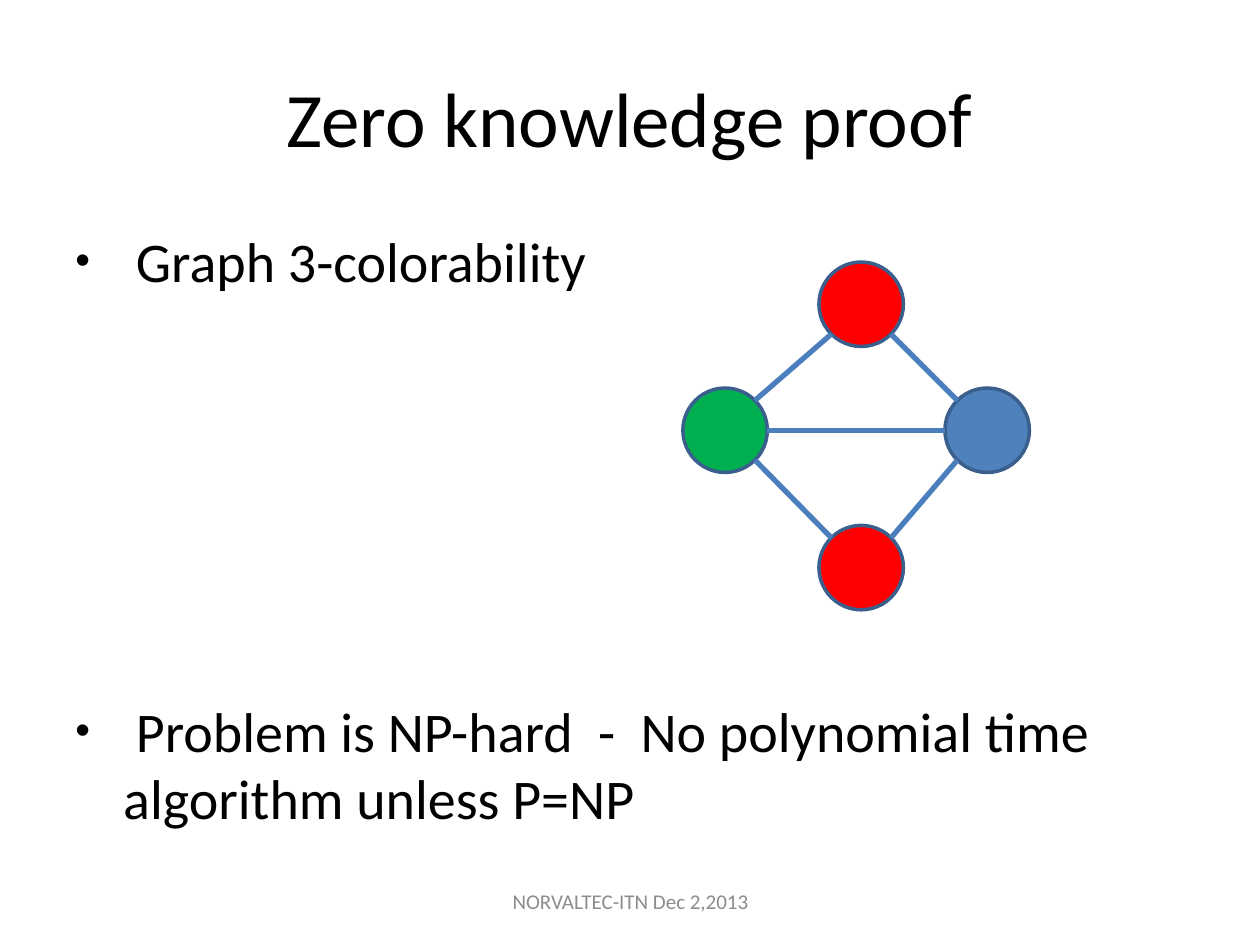
from dataclasses import dataclass
from math import cos, radians, sin

from lxml import etree
from pptx import Presentation
from pptx.dml.color import RGBColor
from pptx.enum.shapes import MSO_CONNECTOR, MSO_SHAPE
from pptx.enum.text import MSO_ANCHOR, PP_ALIGN
from pptx.oxml.ns import qn
from pptx.util import Inches, Pt

OVAL = MSO_SHAPE.OVAL
STRAIGHT = MSO_CONNECTOR.STRAIGHT
TOP, MIDDLE = MSO_ANCHOR.TOP, MSO_ANCHOR.MIDDLE
LEFT, CENTER = PP_ALIGN.LEFT, PP_ALIGN.CENTER

FONT = "Calibri"
COLORS = {
    "text": "000000",
    "footer": "8C8C8C",
    "red": "FF0000",
    "green": "00B050",
    "blue": "4F81BD",
    "outline": "3A5F8C",
    "edge": "4B7EBC",
}
NODE_SIZE = 0.67
BULLET_INDENT = 0.38


@dataclass
class TextBlock:
    paragraphs: list[str]
    left: float
    top: float
    width: float
    height: float
    size: int
    color: str = "text"
    anchor: MSO_ANCHOR = MIDDLE
    align: PP_ALIGN = CENTER


@dataclass
class Node:
    left: float
    top: float
    color: str

    def rim_point(self, angle: float) -> tuple[float, float]:
        """Point on the circle, clockwise in degrees from the right."""
        radius = NODE_SIZE / 2
        return (self.left + radius * (1 + cos(radians(angle))),
                self.top + radius * (1 + sin(radians(angle))))


@dataclass
class Edge:
    start: str
    start_angle: float
    end: str
    end_angle: float


TITLE = TextBlock(["Zero knowledge proof"], 0.5, 0.3, 9, 1.25, 44)
BODY = TextBlock(
    [" Graph 3-colorability",
     " Problem is NP-hard  -  No polynomial time algorithm unless P=NP"],
    0.5, 1.75, 9, 4.95, 32, anchor=TOP, align=LEFT)
FOOTER = TextBlock(["NORVALTEC-ITN Dec 2,2013"], 3.42, 6.95, 3.17, 0.4, 12, "footer")

NODES = {
    "bottom": Node(6.5, 4.17, "red"),
    "right": Node(7.5, 3.08, "blue"),
    "left": Node(5.42, 3.08, "green"),
    "top": Node(6.5, 2.08, "red"),
}
EDGES = [
    Edge("left", -45, "top", 135),
    Edge("top", 45, "right", -135),
    Edge("left", 0, "right", 180),
    Edge("left", 45, "bottom", -135),
    Edge("right", 135, "bottom", -45),
]


def rgb(name: str) -> RGBColor:
    return RGBColor.from_string(COLORS[name])


def add_text(slide, block: TextBlock):
    box = slide.shapes.add_textbox(Inches(block.left), Inches(block.top),
                                   Inches(block.width), Inches(block.height))
    text_frame = box.text_frame
    text_frame.word_wrap = True
    text_frame.vertical_anchor = block.anchor
    text_frame.text = "\n".join(block.paragraphs)
    for paragraph in text_frame.paragraphs:
        paragraph.alignment = block.align
        for run in paragraph.runs:
            run.font.name = FONT
            run.font.size = Pt(block.size)
            run.font.color.rgb = rgb(block.color)
    return text_frame


def add_bullet(paragraph) -> None:
    properties = paragraph._p.get_or_add_pPr()
    properties.set("marL", str(Inches(BULLET_INDENT)))
    properties.set("indent", str(-Inches(BULLET_INDENT)))
    etree.SubElement(properties, qn("a:buSzPct"), val="75000")
    etree.SubElement(properties, qn("a:buFont"), typeface="Arial")
    etree.SubElement(properties, qn("a:buChar"), char="•")


def add_node(slide, node: Node) -> None:
    shape = slide.shapes.add_shape(OVAL, Inches(node.left), Inches(node.top),
                                   Inches(NODE_SIZE), Inches(NODE_SIZE))
    shape.shadow.inherit = False
    shape.fill.solid()
    shape.fill.fore_color.rgb = rgb(node.color)
    shape.line.color.rgb = rgb("outline")
    shape.line.width = Pt(2)


def add_edge(slide, edge: Edge) -> None:
    start = NODES[edge.start].rim_point(edge.start_angle)
    end = NODES[edge.end].rim_point(edge.end_angle)
    connector = slide.shapes.add_connector(
        STRAIGHT, *(Inches(value) for value in start + end))
    connector.line.color.rgb = rgb("edge")
    connector.line.width = Pt(3)
    etree.SubElement(connector._element.spPr, qn("a:effectLst"))


def main() -> None:
    presentation = Presentation()
    presentation.slide_width = Inches(10)
    presentation.slide_height = Inches(7.5)
    slide = presentation.slides.add_slide(presentation.slide_layouts[6])

    # Title and bullets, with room for the graph between the bullets
    add_text(slide, TITLE)
    body = add_text(slide, BODY)
    body.paragraphs[1].space_before = Pt(230)
    for paragraph in body.paragraphs:
        add_bullet(paragraph)

    # Three-coloured graph
    for node in NODES.values():
        add_node(slide, node)
    for edge in EDGES:
        add_edge(slide, edge)

    # Footer
    add_text(slide, FOOTER)

    presentation.save("out.pptx")


if __name__ == "__main__":
    main()
